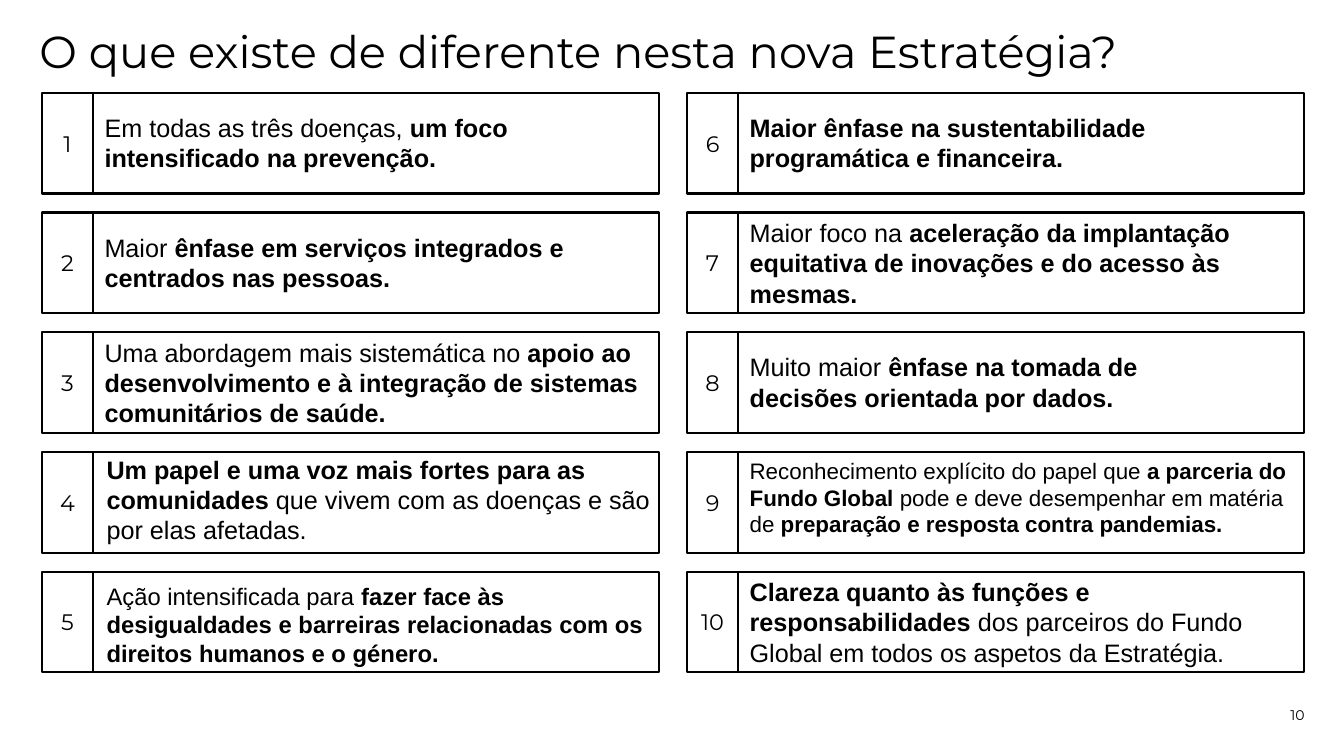
from dataclasses import dataclass

import pptx
import pptx.dml.color
import pptx.enum.shapes
import pptx.enum.text
import pptx.util

Pt = pptx.util.Pt
RGBColor = pptx.dml.color.RGBColor
ALIGN = pptx.enum.text.PP_ALIGN
ANCHOR = pptx.enum.text.MSO_ANCHOR
RECTANGLE = pptx.enum.shapes.MSO_SHAPE.RECTANGLE


@dataclass(frozen=True)
class Theme:
    ink: RGBColor = RGBColor(0, 0, 0)
    paper: RGBColor = RGBColor(255, 255, 255)
    heading_font: str = "Montserrat"
    body_font: str = "Arial"
    title_size: float = 32
    number_size: float = 16
    body_size: float = 18
    snug_size: float = 17
    small_size: float = 16
    page_size: float = 10
    outline: float = 1.5


THEME = Theme()

# Card grid, in points
GRID_LEFT, GRID_TOP = 30.2, 66.3
COLUMN_STEP, ROW_STEP = 460.8, 85.5
ROWS = 5
CARD_HEIGHT, BADGE_WIDTH = 72, 36
FRAME_INSET, FRAME_WIDTH = 12.2, 428.5
TEXT_INSET, TEXT_WIDTH = 37.4, 403.2


@dataclass(frozen=True)
class Change:
    """Text marked with ** is bold; drop and shift move it within its card."""
    text: str
    drop: float = 0
    shift: float = 0
    width: float = TEXT_WIDTH
    size: float = THEME.body_size


TWO_LINE_DROP = 10.4
CHANGES = [
    Change("Em todas as três doenças, **um foco intensificado na prevenção.", TWO_LINE_DROP),
    Change("Maior **ênfase em serviços integrados e centrados nas pessoas.", TWO_LINE_DROP),
    Change("Uma abordagem mais sistemática no **apoio ao desenvolvimento e à "
           "integração de sistemas comunitários de saúde."),
    Change("**Um papel e uma voz mais fortes para as comunidades** que vivem com as "
           "doenças e são por elas afetadas.", drop=-2, shift=1.4, width=404.6),
    Change("Ação intensificada para **fazer face às desigualdades e barreiras "
           "relacionadas com os direitos humanos e o género.",
           drop=3.6, shift=1.4, width=404.6, size=THEME.snug_size),
    Change("**Maior ênfase na sustentabilidade programática e financeira.", TWO_LINE_DROP),
    Change("Maior foco na **aceleração da implantação equitativa de inovações e do "
           "acesso às mesmas."),
    Change("Muito maior **ênfase na tomada de decisões orientada por dados.",
           TWO_LINE_DROP, width=370),
    Change("Reconhecimento explícito do papel que **a parceria do Fundo Global **pode e "
           "deve desempenhar em matéria de **preparação e resposta contra pandemias.",
           size=THEME.small_size),
    Change("**Clareza quanto às funções e responsabilidades** dos parceiros do Fundo "
           "Global em todos os aspetos da Estratégia."),
]


def add_run(paragraph, text, font, size, bold=False):
    run = paragraph.add_run()
    run.text = text
    run.font.name = font
    run.font.size = Pt(size)
    run.font.bold = bold
    run.font.color.rgb = THEME.ink


def set_frame(frame, anchor, margin=None):
    frame.word_wrap = True
    frame.auto_size = pptx.enum.text.MSO_AUTO_SIZE.NONE
    frame.vertical_anchor = anchor
    if margin is not None:
        frame.margin_left = frame.margin_right = Pt(margin)
        frame.margin_top = frame.margin_bottom = Pt(margin)


def add_box(shapes, left, top, width, filled):
    box = shapes.add_shape(RECTANGLE, Pt(left), Pt(top), Pt(width), Pt(CARD_HEIGHT))
    box.shadow.inherit = False
    if filled:
        box.fill.solid()
        box.fill.fore_color.rgb = THEME.paper
    else:
        box.fill.background()
    box.line.color.rgb = THEME.ink
    box.line.width = Pt(THEME.outline)
    return box


def add_card(slide, number, change, left, top):
    card = slide.shapes.add_group_shape().shapes
    add_box(card, left + FRAME_INSET, top, FRAME_WIDTH, filled=False)

    badge = add_box(card, left, top, BADGE_WIDTH, filled=True).text_frame
    set_frame(badge, ANCHOR.MIDDLE)
    badge.paragraphs[0].alignment = ALIGN.CENTER
    add_run(badge.paragraphs[0], str(number), THEME.heading_font, THEME.number_size)

    statement = card.add_textbox(
        Pt(left + TEXT_INSET + change.shift), Pt(top + change.drop),
        Pt(change.width), Pt(CARD_HEIGHT - 2 * max(change.drop, 0))).text_frame
    set_frame(statement, ANCHOR.TOP)
    for index, part in enumerate(change.text.split("**")):
        if part:
            add_run(statement.paragraphs[0], part, THEME.body_font, change.size,
                    bold=index % 2 == 1)


def add_title(slide, text):
    title = slide.shapes.title
    title.left, title.top, title.width, title.height = Pt(28.2), Pt(21.6), Pt(903.6), Pt(36.7)
    set_frame(title.text_frame, ANCHOR.TOP, margin=0)
    paragraph = title.text_frame.paragraphs[0]
    paragraph.alignment = ALIGN.LEFT
    paragraph.line_spacing = 0.9
    add_run(paragraph, text, THEME.heading_font, THEME.title_size)


def add_page_number(slide, number):
    page = slide.shapes.add_textbox(Pt(861.2), Pt(488.2), Pt(70.6), Pt(28.8)).text_frame
    set_frame(page, ANCHOR.BOTTOM, margin=0)
    page.paragraphs[0].alignment = ALIGN.RIGHT
    add_run(page.paragraphs[0], str(number), THEME.heading_font, THEME.page_size)


def main():
    deck = pptx.Presentation()
    deck.slide_width, deck.slide_height = Pt(960), Pt(540)
    slide = deck.slides.add_slide(deck.slide_layouts.get_by_name("Title Only"))
    add_title(slide, "O que existe de diferente nesta nova Estratégia?")
    add_page_number(slide, 10)
    for index, change in enumerate(CHANGES):
        column, row = divmod(index, ROWS)
        add_card(slide, index + 1, change,
                 GRID_LEFT + column * COLUMN_STEP, GRID_TOP + row * ROW_STEP)
    deck.save("out.pptx")


if __name__ == "__main__":
    main()
